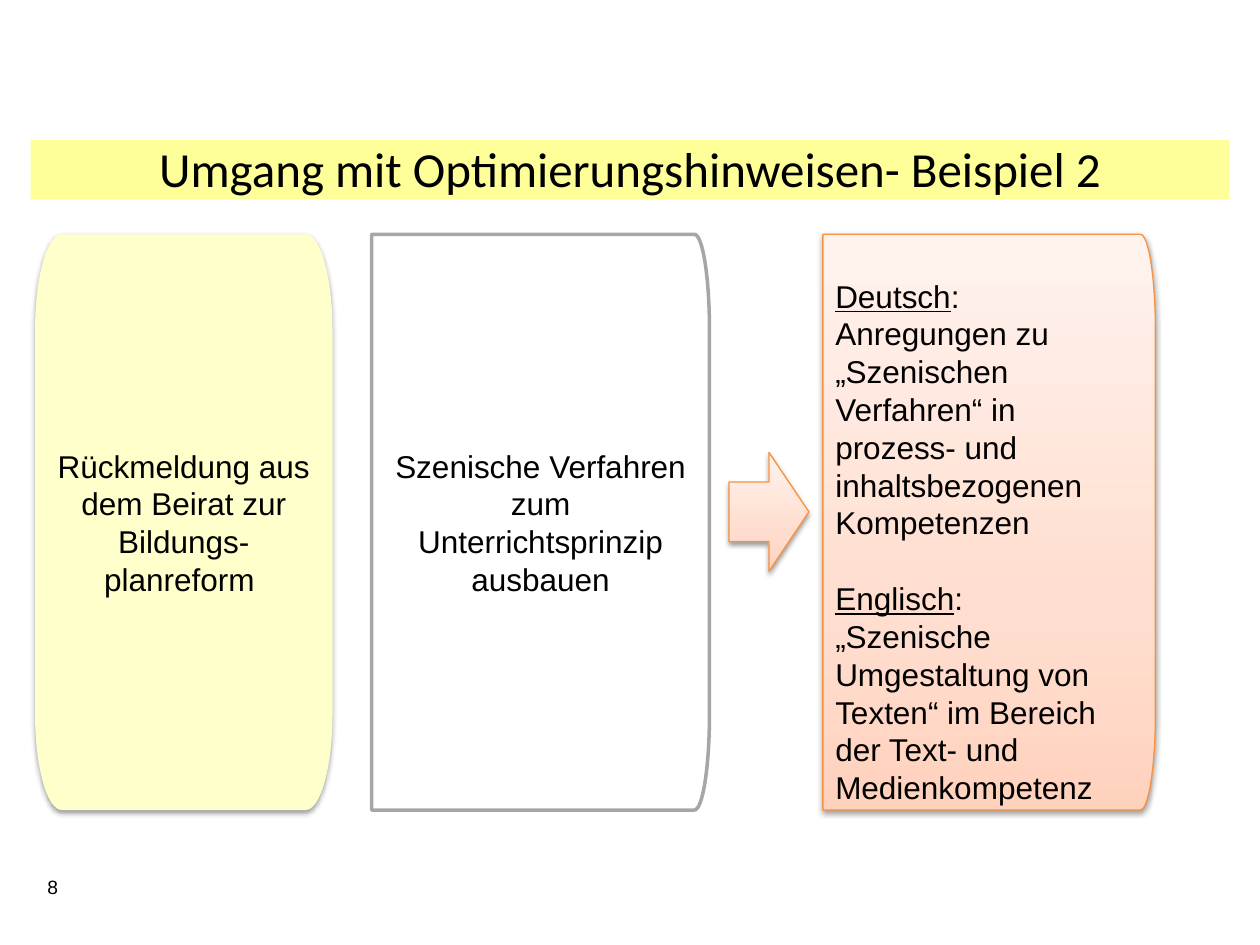
from copy import deepcopy

from lxml import etree
from pptx import Presentation
from pptx.dml.color import RGBColor
from pptx.enum import shapes, text
from pptx.oxml import ns
from pptx.util import Pt

BLACK = RGBColor(0, 0, 0)
WHITE = RGBColor(0xFF, 0xFF, 0xFF)
GREY = RGBColor(0xA6, 0xA6, 0xA6)
YELLOW = RGBColor(0xFF, 0xFF, 0x99)
PALE_YELLOW = RGBColor(0xFF, 0xFF, 0xCC)
ORANGE = RGBColor(0xF6, 0x92, 0x40)
PEACH_STOPS = [(0, RGBColor(0xFF, 0xD2, 0xBD)),
               (0.35, RGBColor(0xFF, 0xDE, 0xD0)),
               (1, RGBColor(0xFF, 0xF2, 0xED))]

CARD_TOP, CARD_HEIGHT = 133.9, 329
CORNER_HEIGHT = 54.8
CURVE_RATIO = 0.55
BODY_SIZE = 18
BODY_LINE = 21.7


def add_shadow(shape):
    effects = shape._element.spPr.find(ns.qn("a:effectLst"))
    shadow = etree.SubElement(effects, ns.qn("a:outerShdw"), blurRad=str(Pt(3.1)),
                              dist=str(Pt(1.6)), dir="5400000", rotWithShape="0")
    color = etree.SubElement(shadow, ns.qn("a:srgbClr"), val=str(BLACK))
    etree.SubElement(color, ns.qn("a:alpha"), val="38000")


def set_line(shape, color, width):
    shape.line.color.rgb = color
    shape.line.width = Pt(width)


def fill_plain(shape, color):
    shape.fill.solid()
    shape.fill.fore_color.rgb = color


def fill_peach(shape):
    """Give a three-stop gradient, light at the top, with an orange outline."""
    shape.fill.gradient()
    shape.fill.gradient_angle = 90
    stop_list = shape._element.spPr.find(".//" + ns.qn("a:gsLst"))
    stop_list.append(deepcopy(stop_list[0]))
    for stop, (position, color) in zip(shape.fill.gradient_stops, PEACH_STOPS):
        stop.position = position
        stop.color.rgb = color
    set_line(shape, ORANGE, 0.75)
    add_shadow(shape)


def set_font(paragraph, size, name="Arial"):
    paragraph.font.size = Pt(size)
    paragraph.font.name = name
    paragraph.font.color.rgb = BLACK


def curve_corners(card):
    """Turn every slanted segment of the outline into a quarter ellipse."""
    outline = card._element.spPr.find(".//" + ns.qn("a:path"))
    width, height = int(outline.get("w")), int(outline.get("h"))
    start = None
    for segment in list(outline):
        if not len(segment):
            continue
        end = int(segment[0].get("x")), int(segment[0].get("y"))
        if start and start[0] != end[0] and start[1] != end[1]:
            corner = (0 if 0 in (start[0], end[0]) else width,
                      0 if 0 in (start[1], end[1]) else height)
            curve = etree.Element(ns.qn("a:cubicBezTo"))
            for anchor in (start, end):
                x, y = (round(a + CURVE_RATIO * (c - a)) for a, c in zip(anchor, corner))
                etree.SubElement(curve, ns.qn("a:pt"), x=str(x), y=str(y))
            curve.append(segment[0])
            outline.replace(segment, curve)
        start = end


def add_card(slide, left, width, corner_width, round_left=False):
    """Draw a card with elliptical corners on the right, or on both sides."""
    right, bottom = left + width, CARD_TOP + CARD_HEIGHT
    high, low = CARD_TOP + CORNER_HEIGHT, bottom - CORNER_HEIGHT
    inner_left, inner_right = left + corner_width, right - corner_width
    points = [(inner_right, CARD_TOP), (right, high), (right, low), (inner_right, bottom)]
    if round_left:
        points += [(inner_left, bottom), (left, low), (left, high), (inner_left, CARD_TOP)]
    else:
        points += [(left, bottom), (left, CARD_TOP)]
    points = [(Pt(x), Pt(y)) for x, y in points]
    builder = slide.shapes.build_freeform(*points[0])
    builder.add_line_segments(points[1:], close=True)
    card = builder.convert_to_shape()
    curve_corners(card)
    card.shadow.inherit = False
    card.text_frame.word_wrap = True
    card.text_frame.vertical_anchor = text.MSO_ANCHOR.MIDDLE
    return card


def write_centred(card, words, side_inset, end_inset):
    frame = card.text_frame
    frame.margin_left = frame.margin_right = Pt(side_inset)
    frame.margin_top = frame.margin_bottom = Pt(end_inset)
    paragraph = frame.paragraphs[0]
    paragraph.text = words
    paragraph.alignment = text.PP_ALIGN.CENTER
    set_font(paragraph, BODY_SIZE)


def add_text(slide, box, words, size, font_name, alignment):
    frame = slide.shapes.add_textbox(*map(Pt, box)).text_frame
    frame.word_wrap = True
    paragraph = frame.paragraphs[0]
    paragraph.text = words
    paragraph.alignment = alignment
    set_font(paragraph, size, font_name)


def add_title_band(slide, *box):
    band = slide.shapes.add_shape(shapes.MSO_SHAPE.RECTANGLE, *map(Pt, box))
    band.shadow.inherit = False
    fill_plain(band, YELLOW)
    band.line.fill.background()


def add_source_card(slide, left, width):
    card = add_card(slide, left, width, 15.3, round_left=True)
    fill_plain(card, PALE_YELLOW)
    card.line.fill.background()
    add_shadow(card)
    write_centred(card, "Rückmeldung aus dem Beirat zur Bildungs-planreform ", 10.8, 7.9)


def add_request_card(slide, left, width):
    card = add_card(slide, left, width, 8.6)
    fill_plain(card, WHITE)
    set_line(card, GREY, 2)
    write_centred(card, "Szenische Verfahren zum Unterrichtsprinzip ausbauen", 8.6, 5.8)


def add_result_card(slide, left, width, subjects):
    card = add_card(slide, left, width, 8.6)
    fill_peach(card)
    frame = card.text_frame
    frame.margin_left = frame.margin_right = Pt(7.2)
    frame.margin_top, frame.margin_bottom = Pt(3.6 + BODY_LINE), Pt(3.6)
    for index, (subject, result) in enumerate(subjects):
        heading = frame.add_paragraph() if index else frame.paragraphs[0]
        if index:
            heading.space_before = Pt(BODY_LINE)
        name = heading.add_run()
        name.text = subject
        name.font.underline = True
        heading.add_run().text = ":"
        body = frame.add_paragraph()
        body.text = result
        for paragraph in (heading, body):
            paragraph.alignment = text.PP_ALIGN.LEFT
            set_font(paragraph, BODY_SIZE)


def add_arrow(slide, *box):
    arrow = slide.shapes.add_shape(shapes.MSO_SHAPE.RIGHT_ARROW, *map(Pt, box))
    arrow.shadow.inherit = False
    fill_peach(arrow)


def main():
    presentation = Presentation()
    presentation.slide_width, presentation.slide_height = Pt(720), Pt(540)
    slide = presentation.slides.add_slide(presentation.slide_layouts[6])
    add_title_band(slide, 17.5, 79.9, 685, 34)
    add_text(slide, (20, 496.6, 40, 21), "8", 11, "Arial", text.PP_ALIGN.LEFT)
    add_source_card(slide, 20, 170)
    add_text(slide, (0, 75.6, 720, 75), "Umgang mit Optimierungshinweisen- Beispiel 2",
             28, "Calibri", text.PP_ALIGN.CENTER)
    add_result_card(slide, 470.2, 190, [
        ("Deutsch", "Anregungen zu „Szenischen Verfahren“ in prozess- und "
                    "inhaltsbezogenen Kompetenzen"),
        ("Englisch", "„Szenische Umgestaltung von Texten“ im Bereich der Text- und "
                     "Medienkompetenz"),
    ])
    add_request_card(slide, 212.4, 193)
    add_arrow(slide, 416.6, 258.5, 45.6, 68)
    presentation.save("out.pptx")


if __name__ == "__main__":
    main()
